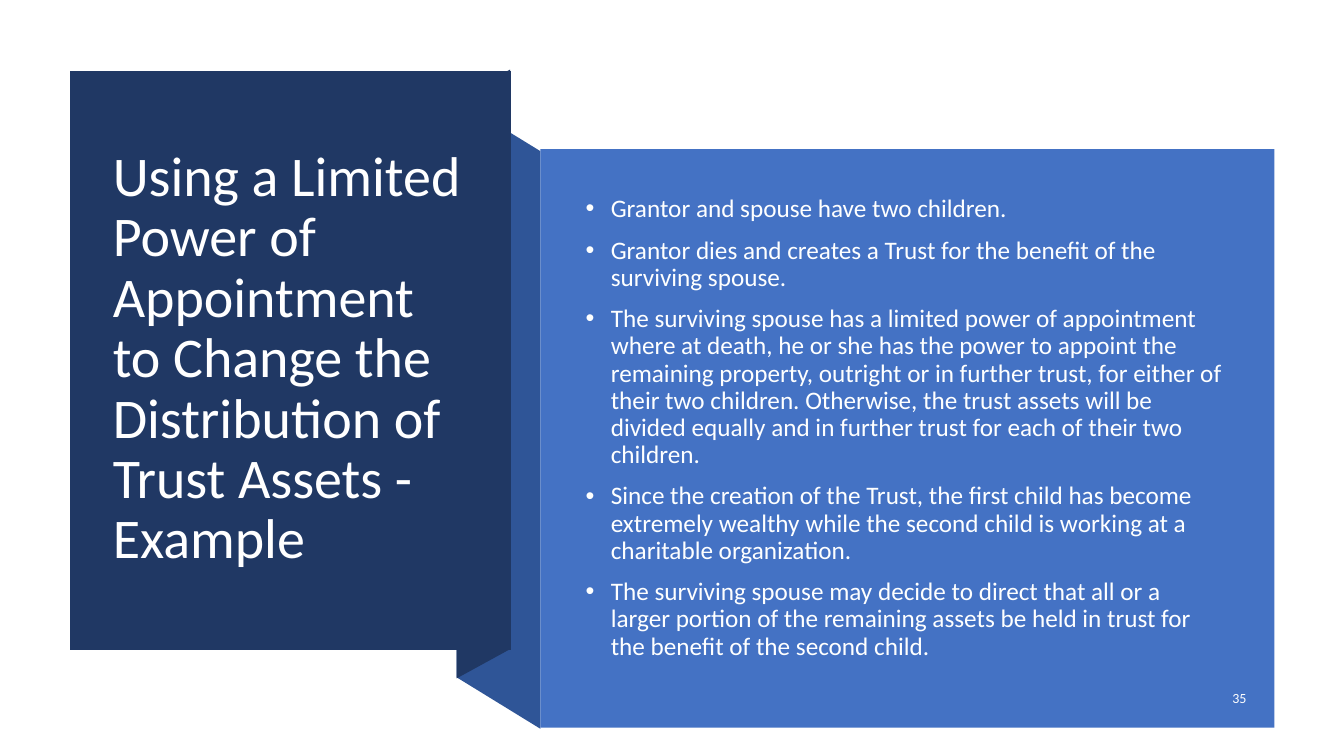
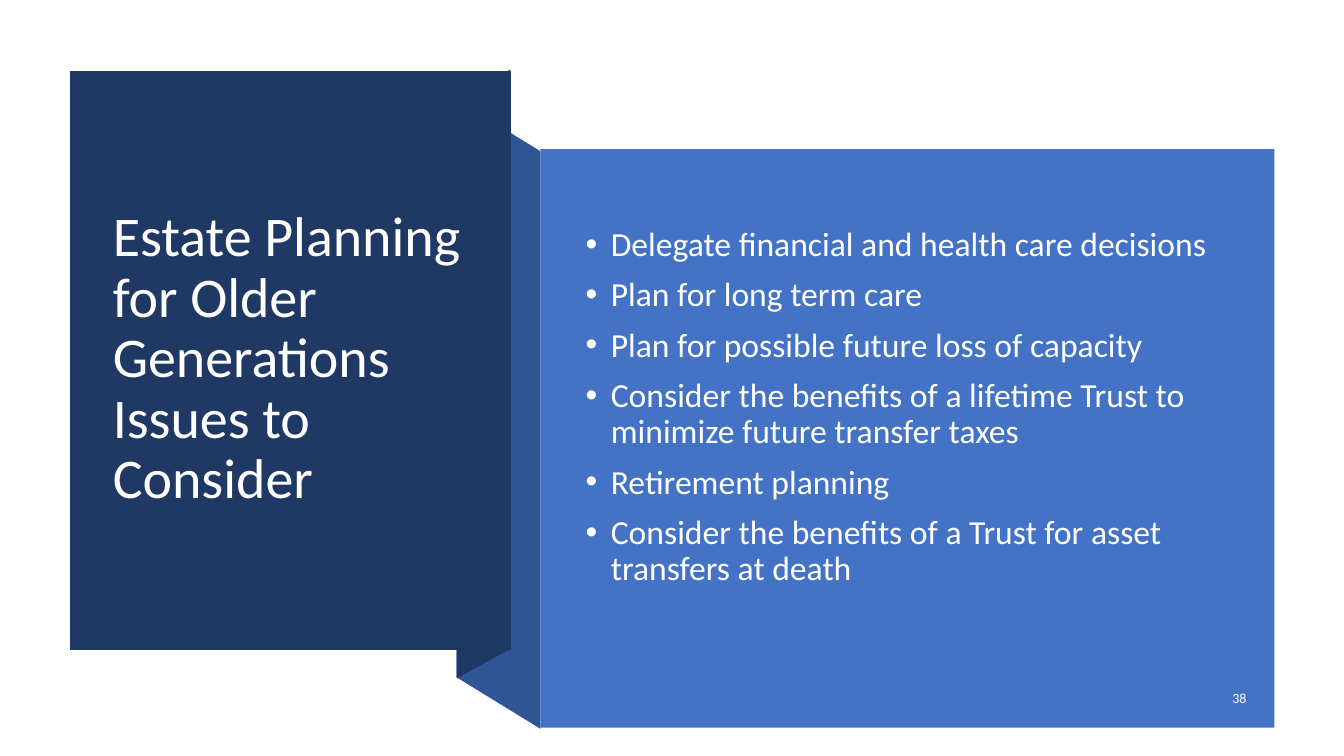
"""Build two estate planning slides with a folded title ribbon."""
from dataclasses import dataclass

from lxml import etree
from pptx import Presentation
from pptx.dml.color import RGBColor
from pptx.enum.shapes import MSO_SHAPE
from pptx.enum.text import MSO_ANCHOR, PP_ALIGN
from pptx.oxml.ns import qn
from pptx.util import Pt

PX = 9144
SLIDE_WIDTH, SLIDE_HEIGHT = 1333, 750
FONT = "Calibri"
NAVY, BLUE, PANEL_BLUE = "203864", "2F5597", "4472C4"
WHITE, BODY_WHITE = "FFFFFF", "FEFFFF"
RECTANGLE = MSO_SHAPE.RECTANGLE
MIDDLE = MSO_ANCHOR.MIDDLE
LEFT, RIGHT = PP_ALIGN.LEFT, PP_ALIGN.RIGHT
BULLET_INDENT = 25


@dataclass(frozen=True)
class Box:
    left: int
    top: int
    width: int
    height: int

    def emu(self) -> tuple[int, ...]:
        return tuple(value * PX for value in (self.left, self.top, self.width, self.height))


@dataclass(frozen=True)
class Outline:
    points: tuple[tuple[int, int], ...]
    color: str


@dataclass(frozen=True)
class TextStyle:
    size: int
    color: str
    align: PP_ALIGN = LEFT
    line_spacing: float = 1.0
    space_before: int = 0
    bulleted: bool = False


@dataclass(frozen=True)
class Topic:
    title: str
    points: tuple[str, ...]
    point_size: int
    body: Box
    number: int


RIBBON = (
    Outline(((536, 723), (453, 672), (453, 99), (536, 150)), BLUE),
    Outline(((506, 644), (453, 673), (453, 98), (506, 69)), NAVY),
    Outline(((69, 70), (507, 70), (507, 645), (69, 645)), NAVY),
)
TITLE = Box(102, 107, 371, 499)
PANEL = Box(536, 148, 728, 574)
PAGE_NUMBER = Box(1171, 675, 75, 35)
TITLE_STYLE = TextStyle(40, WHITE, line_spacing=0.9)
NUMBER_STYLE = TextStyle(10, WHITE, align=RIGHT)

TOPICS = (
    Topic(
        "Using a Limited Power of Appointment to Change the Distribution of Trust Assets - Example",
        (
            "Grantor and spouse have two children.",
            "Grantor dies and creates a Trust for the benefit of the surviving spouse.",
            "The surviving spouse has a limited power of appointment where at death, he or she has "
            "the power to appoint the remaining property, outright or in further trust, for either "
            "of their two children. Otherwise, the trust assets will be divided equally and in "
            "further trust for each of their two children.",
            "Since the creation of the Trust, the first child has become extremely wealthy while "
            "the second child is working at a charitable organization.",
            "The surviving spouse may decide to direct that all or a larger portion of the "
            "remaining assets be held in trust for the benefit of the second child.",
        ),
        18,
        Box(571, 188, 651, 474),
        35,
    ),
    Topic(
        "Estate Planning for Older Generations\vIssues to Consider",
        (
            "Delegate financial and health care decisions",
            "Plan for long term care",
            "Plan for possible future loss of capacity",
            "Consider the benefits of a lifetime Trust to minimize future transfer taxes",
            "Retirement planning",
            "Consider the benefits of a Trust for asset transfers at death",
        ),
        24,
        Box(571, 147, 651, 515),
        38,
    ),
)


def rgb(color: str) -> RGBColor:
    return RGBColor.from_string(color)


def paint(shape, color: str) -> None:
    shape.shadow.inherit = False
    shape.fill.solid()
    shape.fill.fore_color.rgb = rgb(color)
    shape.line.fill.background()


def add_outline(slide, outline: Outline) -> None:
    start, *others = outline.points
    builder = slide.shapes.build_freeform(*start, scale=PX)
    builder.add_line_segments(others, close=True)
    paint(builder.convert_to_shape(), outline.color)


def add_bullet(paragraph) -> None:
    properties = paragraph._p.get_or_add_pPr()
    properties.set("marL", str(BULLET_INDENT * PX))
    properties.set("indent", str(-BULLET_INDENT * PX))
    etree.SubElement(properties, qn("a:buFont"), typeface="Arial")
    etree.SubElement(properties, qn("a:buChar"), char="•")


def add_text(slide, box: Box, lines: tuple[str, ...], style: TextStyle) -> None:
    text_frame = slide.shapes.add_textbox(*box.emu()).text_frame
    text_frame.word_wrap = True
    text_frame.vertical_anchor = MIDDLE
    text_frame.text = "\n".join(lines)
    for paragraph in text_frame.paragraphs:
        paragraph.alignment = style.align
        paragraph.line_spacing = style.line_spacing
        paragraph.space_before = Pt(style.space_before)
        if style.bulleted:
            add_bullet(paragraph)
        for run in paragraph.runs:
            run.font.name = FONT
            run.font.size = Pt(style.size)
            run.font.color.rgb = rgb(style.color)


def add_topic(presentation, topic: Topic) -> None:
    slide = presentation.slides.add_slide(presentation.slide_layouts[6])
    for outline in RIBBON:
        add_outline(slide, outline)
    add_text(slide, TITLE, (topic.title,), TITLE_STYLE)
    paint(slide.shapes.add_shape(RECTANGLE, *PANEL.emu()), PANEL_BLUE)
    point_style = TextStyle(
        topic.point_size, BODY_WHITE, line_spacing=0.9, space_before=10, bulleted=True
    )
    add_text(slide, topic.body, topic.points, point_style)
    add_text(slide, PAGE_NUMBER, (str(topic.number),), NUMBER_STYLE)


def main() -> None:
    presentation = Presentation()
    presentation.slide_width = SLIDE_WIDTH * PX
    presentation.slide_height = SLIDE_HEIGHT * PX
    for topic in TOPICS:
        add_topic(presentation, topic)
    presentation.save("out.pptx")


if __name__ == "__main__":
    main()
